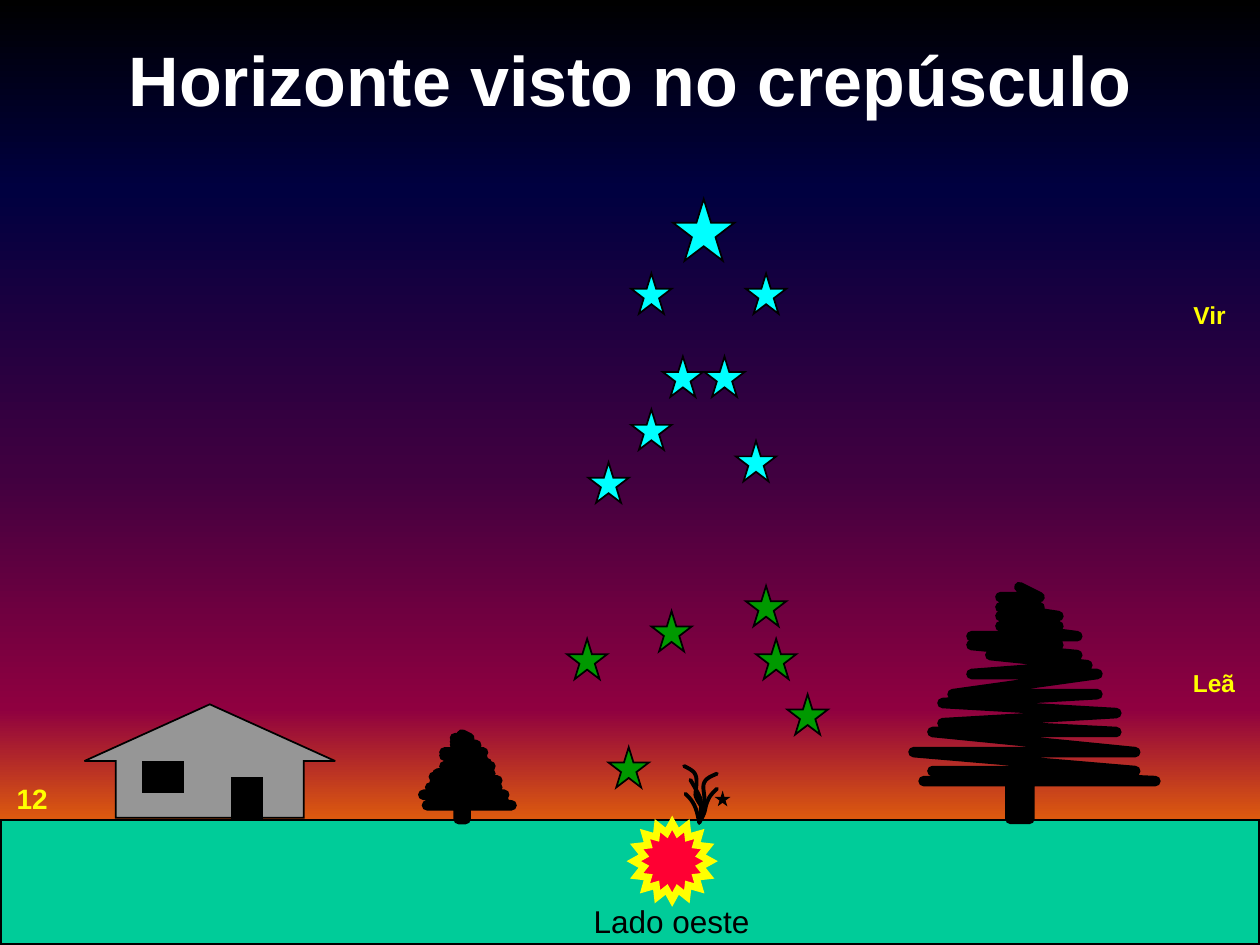
"""Build a slide showing the western horizon at dusk with two constellations."""
from dataclasses import dataclass
from typing import Any

from lxml import etree
from pptx import Presentation
from pptx import util as u
from pptx.dml.color import RGBColor
from pptx.enum import shapes, text
from pptx.oxml.ns import qn

BLACK = RGBColor(0x00, 0x00, 0x00)
WHITE = RGBColor(0xFF, 0xFF, 0xFF)
YELLOW = RGBColor(0xFF, 0xFF, 0x00)
CYAN = RGBColor(0x00, 0xFF, 0xFF)
GREEN = RGBColor(0x00, 0x99, 0x00)
GROUND = RGBColor(0x00, 0xCC, 0x99)
RED = RGBColor(0xFF, 0x00, 0x33)
GRAY = RGBColor(0x96, 0x96, 0x96)
SKY = [(0, "000000"), (20, "000040"), (50, "400040"),
       (75, "8F0040"), (90, "F27300"), (100, "FFBF00")]

Point = tuple[float, float]
KIND = shapes.MSO_SHAPE

TREE_OUTLINE: list[Point] = [
    (0.84, 0), (1, 0.08), (0.69, 0.08), (1, 0.16), (0.69, 0.16), (1.15, 0.23),
    (0.69, 0.23), (1.15, 0.31), (0.69, 0.31), (1.3, 0.39), (0.46, 0.39),
    (1.15, 0.46), (0.46, 0.46), (1.3, 0.54), (0.61, 0.54), (1.38, 0.62),
    (0.46, 0.69), (1.46, 0.69), (0.31, 0.85), (1.46, 0.85), (0.23, 0.92),
    (1.61, 1), (0.23, 1.08), (1.61, 1.15), (0.15, 1.15), (1.76, 1.31),
    (0, 1.31), (1.76, 1.46), (0.15, 1.46), (1.92, 1.54), (0.08, 1.54),
    (0.77, 1.54), (0.77, 1.84), (0.92, 1.84), (0.92, 1.54)]

TWIGS: list[list[Point]] = [
    [(5.44, 6.3), (5.47, 6.33), (5.49, 6.35), (5.51, 6.39),
     (5.53, 6.43), (5.54, 6.48), (5.55, 6.53)],
    [(5.48, 6.19), (5.51, 6.24), (5.54, 6.29), (5.56, 6.34),
     (5.57, 6.4), (5.56, 6.47), (5.55, 6.53)],
    [(5.69, 6.26), (5.66, 6.29), (5.63, 6.32), (5.62, 6.35), (5.6, 6.39),
     (5.6, 6.42), (5.59, 6.45), (5.58, 6.48), (5.56, 6.51), (5.55, 6.53)],
    [(5.69, 6.14), (5.65, 6.16), (5.61, 6.17), (5.59, 6.21), (5.57, 6.25),
     (5.6, 6.32), (5.59, 6.36), (5.58, 6.4), (5.57, 6.43), (5.56, 6.45)],
    [(5.43, 6.08), (5.47, 6.1), (5.51, 6.12), (5.52, 6.15), (5.54, 6.19),
     (5.52, 6.27), (5.52, 6.31), (5.53, 6.35), (5.55, 6.37), (5.56, 6.39)]]


@dataclass
class Figure:
    """A preset shape with its place and colours."""
    kind: Any
    left: float
    top: float
    width: float
    height: float
    fill: RGBColor
    line: RGBColor = BLACK
    weight: float = 1
    adjust: tuple[float, ...] = ()


@dataclass
class Label:
    """A centred line of text."""
    words: str
    left: float
    top: float
    width: float
    height: float
    size: float
    color: RGBColor = YELLOW
    bold: bool = True
    anchor: Any = text.MSO_ANCHOR.TOP
    wrap: bool = False


@dataclass
class Tree:
    """A tree at a given corner, as a share of the full-size outline."""
    left: float
    top: float
    scale: float


@dataclass
class Constellation:
    """Equal stars of one colour, by their left and top."""
    color: RGBColor
    places: list[Point]


SCENERY = [
    Figure(KIND.RECTANGLE, 0.01, 6.51, 9.98, 0.98, GROUND),
    Figure(KIND.STAR_16_POINT, 5.03, 6.53, 0.61, 0.61, RED, YELLOW, 4, (0.375,)),
    Figure(KIND.UP_ARROW, 0.67, 5.59, 1.99, 0.9, GRAY, adjust=(0.75, 0.5)),
    Figure(KIND.RECTANGLE, 1.84, 6.17, 0.24, 0.32, BLACK),
    Figure(KIND.RECTANGLE, 1.13, 6.05, 0.32, 0.24, BLACK),
    Figure(KIND.STAR_5_POINT, 5.34, 1.58, 0.49, 0.49, CYAN),
    Figure(KIND.STAR_5_POINT, 5.72, 6.33, 0.03, 0.03, YELLOW, weight=2.25)]

TREES = [Tree(7.25, 4.66, 1), Tree(3.36, 5.83, 0.365)]

CONSTELLATIONS = [
    Constellation(GREEN, [(5.92, 4.65), (4.83, 5.93), (6.25, 5.51),
                          (4.5, 5.07), (6, 5.07), (5.17, 4.85)]),
    Constellation(CYAN, [(5.01, 3.25), (5.26, 2.83), (4.67, 3.67), (5.84, 3.5),
                         (5.59, 2.83), (5.01, 2.17), (5.92, 2.17)])]

LABELS = [
    Label("Horizonte visto no crepúsculo", 0, 0, 10, 1.25, 40, WHITE,
          anchor=text.MSO_ANCHOR.MIDDLE, wrap=True),
    Label("12", 0.03, 6.15, 0.45, 0.37, 16),
    Label("Vir", 9.35, 2.33, 0.5, 0.33, 14),
    Label("Leã", 9.33, 5.25, 0.61, 0.33, 14),
    Label("Lado oeste", 4.58, 7.11, 1.5, 0.4, 18, BLACK, False)]


def paint_sky(page: Any) -> None:
    """Give the page a vertical gradient with all the sky colours."""
    fill = page.background.fill
    fill.gradient()
    fill.gradient_angle = 270
    stops = next(page.element.iter(qn("a:gsLst")))
    for stop in list(stops):
        stops.remove(stop)
    for percent, color in SKY:
        stop = etree.SubElement(stops, qn("a:gs"), pos=str(percent * 1000))
        etree.SubElement(stop, qn("a:srgbClr"), val=color)


def set_outline(shape: Any, color: RGBColor, weight: float, rounded: bool) -> None:
    """Set the line colour, width and corner style, without shadow."""
    shape.shadow.inherit = False
    shape.line.color.rgb = color
    shape.line.width = u.Pt(weight)
    line = shape.element.spPr.find(qn("a:ln"))
    if rounded:
        line.set("cap", "rnd")
        etree.SubElement(line, qn("a:round"))
    else:
        etree.SubElement(line, qn("a:miter"), lim="800000")


def draw_figure(page: Any, figure: Figure) -> None:
    """Draw a filled preset shape."""
    place = map(u.Inches, (figure.left, figure.top, figure.width, figure.height))
    shape = page.shapes.add_shape(figure.kind, *place)
    for index, value in enumerate(figure.adjust):
        shape.adjustments[index] = value
    shape.fill.solid()
    shape.fill.fore_color.rgb = figure.fill
    set_outline(shape, figure.line, figure.weight, False)


def draw_stroke(page: Any, points: list[Point], weight: float) -> None:
    """Draw an open black line through the points."""
    start, *rest = [(u.Inches(x), u.Inches(y)) for x, y in points]
    builder = page.shapes.build_freeform(*start)
    builder.add_line_segments(rest, close=False)
    shape = builder.convert_to_shape()
    shape.fill.background()
    set_outline(shape, BLACK, weight, True)


def draw_tree(page: Any, tree: Tree) -> None:
    """Draw the crown strokes and the trunk of a tree."""
    scale = tree.scale
    draw_stroke(page, [(tree.left + x * scale, tree.top + y * scale)
                       for x, y in TREE_OUTLINE], 6)
    draw_figure(page, Figure(KIND.RECTANGLE, tree.left + 0.77 * scale,
                             tree.top + 1.54 * scale, 0.14 * scale, 0.29 * scale, BLACK))


def trace_curve(knots: list[Point], steps: int = 8) -> list[Point]:
    """Return points along a chain of cubic curves."""
    points = [knots[0]]
    for first in range(0, len(knots) - 1, 3):
        a, b, c, d = knots[first:first + 4]
        for step in range(1, steps + 1):
            t = step / steps
            s = 1 - t
            x, y = (s**3 * a[k] + 3 * s * s * t * b[k] + 3 * s * t * t * c[k]
                    + t**3 * d[k] for k in (0, 1))
            points.append((x, y))
    return points


def draw_label(page: Any, label: Label) -> None:
    """Draw a text box with one centred paragraph."""
    place = map(u.Inches, (label.left, label.top, label.width, label.height))
    frame = page.shapes.add_textbox(*place).text_frame
    frame.word_wrap = label.wrap
    frame.vertical_anchor = label.anchor
    para = frame.paragraphs[0]
    para.alignment = text.PP_ALIGN.CENTER
    span = para.add_run()
    span.text = label.words
    style = {"name": "Arial", "size": u.Pt(label.size), "bold": label.bold}
    for name, value in style.items():
        setattr(span.font, name, value)
    span.font.color.rgb = label.color


def main() -> None:
    """Assemble and save the slide."""
    deck = Presentation()
    deck.slide_width, deck.slide_height = u.Inches(10), u.Inches(7.5)
    page = deck.slides.add_slide(deck.slide_layouts[6])
    paint_sky(page)
    for figure in SCENERY:
        draw_figure(page, figure)
    for tree in TREES:
        draw_tree(page, tree)
    for group in CONSTELLATIONS:
        for left, top in group.places:
            draw_figure(page, Figure(KIND.STAR_5_POINT, left, top, 0.32, 0.32, group.color))
    for twig in TWIGS:
        draw_stroke(page, trace_curve(twig), 2.25)
    for label in LABELS:
        draw_label(page, label)
    deck.save("out.pptx")


if __name__ == "__main__":
    main()
